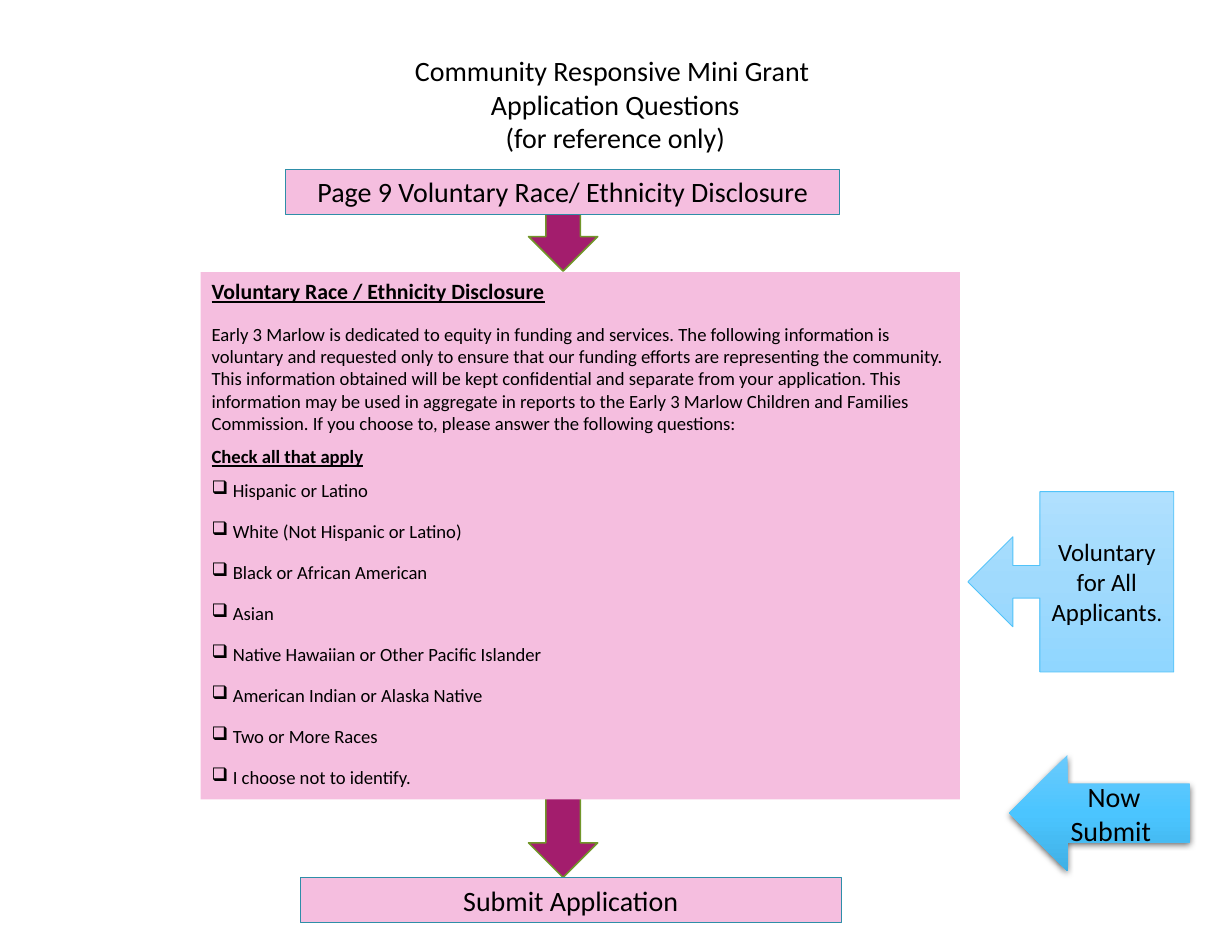
from copy import deepcopy

from lxml.etree import SubElement
from pptx import Presentation
from pptx.dml.color import RGBColor
from pptx.enum.shapes import MSO_SHAPE
from pptx.enum.text import MSO_ANCHOR, MSO_AUTO_SIZE, PP_ALIGN
from pptx.oxml.ns import qn
from pptx.util import Cm, Pt

TITLE = "Community Responsive Mini Grant \nApplication Questions\n(for reference only)"
TITLE_BOX = (7.67, 1.09, 12.57, 2.57)

STEPS = [
    ("Page 9 Voluntary Race/ Ethnicity Disclosure", (6.48, 3.84, 12.57, 1.02)),
    ("Submit Application", (6.81, 19.91, 12.27, 1.02)),
]

DISCLOSURE_BOX = (4.55, 6.17, 17.22, 11.96)
HEADING = "Voluntary Race / Ethnicity Disclosure"
EXPLANATION = (
    "Early 3 Marlow is dedicated to equity in funding and services. The following "
    "information is voluntary and requested only to ensure that our funding efforts are "
    "representing the community. This information obtained will be kept confidential and "
    "separate from your application. This information may be used in aggregate in reports "
    "to the Early 3 Marlow Children and Families Commission. If you choose to, please "
    "answer the following questions:"
)
PROMPT = "Check all that apply"
CHOICES = [
    "Hispanic or Latino",
    "White (Not Hispanic or Latino)",
    "Black or African American",
    "Asian",
    "Native Hawaiian or Other Pacific Islander",
    "American Indian or Alaska Native",
    "Two or More Races",
    "I choose not to identify.",
]

FLOW_CENTER = 12.77
FLOW_WIDTH = 1.57
FLOW_SPANS = [(4.47, 6.15), (16.72, 19.9)]

VOLUNTARY = ("Voluntary for All Applicants", ". ")
VOLUNTARY_BOX = (21.95, 11.15, 4.67, 4.09)
VOLUNTARY_ADJUSTMENTS = (0.18, 0.25, 0.25, 0.65)
SUBMIT = "Now\nSubmit "
SUBMIT_BOX = (22.89, 17.12, 4.09, 2.64)

THEME = {
    "font": "Calibri",
    "text": "000000",
    "panel": "F5BEDF",
    "step_line": "2E8EA8",
    "flow": "A31D6D",
    "flow_line": "719629",
    "voluntary": ("B0E0FE", "A0DAFD", "90D6FF"),
    "voluntary_line": "51C3F9",
    "submit": ("6BCAFC", "4BC5FF", "40B0E5"),
    "large": 18,
    "callout": 16,
    "heading": 14,
    "body": 12,
}


def color(key):
    return RGBColor.from_string(THEME[key])


def add_block(slide, kind, box, fill=None, line=None, width=1):
    block = slide.shapes.add_shape(kind, *map(Cm, box))
    block.shadow.inherit = False
    if fill:
        block.fill.solid()
        block.fill.fore_color.rgb = color(fill)
    if line:
        block.line.color.rgb = color(line)
        block.line.width = Pt(width)
    else:
        block.line.fill.background()
    return block


def fill_gradient(block, key):
    block.fill.gradient()
    block.fill.gradient_angle = 270
    stops = block._element.spPr.find(qn("a:gradFill")).find(qn("a:gsLst"))
    stops.insert(1, deepcopy(stops[0]))
    for index, (stop, value) in enumerate(zip(block.fill.gradient_stops, THEME[key])):
        stop.position = index / 2
        stop.color.rgb = RGBColor.from_string(value)


def add_soft_shadow(block):
    effects = block._element.spPr.find(qn("a:effectLst"))
    shadow = SubElement(effects, qn("a:outerShdw"), blurRad=str(Pt(4.5)),
                        dist=str(Pt(1.5)), dir="5400000", rotWithShape="0")
    tone = SubElement(shadow, qn("a:srgbClr"), val="000000")
    SubElement(tone, qn("a:alpha"), val="63000")


def style(paragraph, size, align=PP_ALIGN.CENTER, space=0, strong=False):
    paragraph.alignment = align
    paragraph.space_before = paragraph.space_after = Pt(space)
    for run in paragraph.runs:
        run.font.name = THEME["font"]
        run.font.size = Pt(THEME[size])
        run.font.color.rgb = color("text")
        run.font.bold = run.font.underline = strong


def add_checkbox(paragraph):
    properties = paragraph._p.get_or_add_pPr()
    properties.set("marL", str(Cm(0.48)))
    properties.set("indent", str(Cm(-0.48)))
    SubElement(properties, qn("a:buChar"), char="❑")


def add_title(slide):
    title = slide.shapes.title
    title.left, title.top, title.width, title.height = map(Cm, TITLE_BOX)
    frame = title.text_frame
    frame.text = TITLE
    frame.word_wrap = True
    frame.auto_size = MSO_AUTO_SIZE.NONE
    frame.vertical_anchor = MSO_ANCHOR.TOP
    for paragraph in frame.paragraphs:
        style(paragraph, "large")


def add_flow_arrows(slide):
    for top, bottom in FLOW_SPANS:
        length = bottom - top
        box = (FLOW_CENTER - length / 2, (top + bottom - FLOW_WIDTH) / 2, length, FLOW_WIDTH)
        arrow = add_block(slide, MSO_SHAPE.RIGHT_ARROW, box, "flow", "flow_line")
        arrow.rotation = 90


def add_disclosure(slide):
    panel = add_block(slide, MSO_SHAPE.RECTANGLE, DISCLOSURE_BOX, "panel")
    frame = panel.text_frame
    frame.vertical_anchor = MSO_ANCHOR.TOP
    frame.text = "\n".join([HEADING, EXPLANATION, PROMPT, *CHOICES])
    heading, explanation, prompt, *choices = frame.paragraphs
    style(heading, "heading", PP_ALIGN.LEFT, 6, True)
    style(explanation, "body", PP_ALIGN.LEFT, 6)
    style(prompt, "body", PP_ALIGN.LEFT, 1, True)
    for choice in choices:
        style(choice, "body", PP_ALIGN.LEFT, 6)
        add_checkbox(choice)


def add_steps(slide):
    for label, box in STEPS:
        step = add_block(slide, MSO_SHAPE.RECTANGLE, box, "panel", "step_line", 0.75)
        step.text_frame.text = label
        step.text_frame.vertical_anchor = MSO_ANCHOR.TOP
        style(step.text_frame.paragraphs[0], "large", space=6)


def add_side_notes(slide):
    voluntary = add_block(slide, MSO_SHAPE.LEFT_ARROW_CALLOUT, VOLUNTARY_BOX,
                          line="voluntary_line", width=0.5)
    fill_gradient(voluntary, "voluntary")
    for index, value in enumerate(VOLUNTARY_ADJUSTMENTS):
        voluntary.adjustments[index] = value
    note = voluntary.text_frame.paragraphs[0]
    for part in VOLUNTARY:
        note.add_run().text = part
    style(note, "callout")
    note.runs[1].font.size = Pt(THEME["heading"])

    submit = add_block(slide, MSO_SHAPE.LEFT_ARROW, SUBMIT_BOX)
    fill_gradient(submit, "submit")
    add_soft_shadow(submit)
    submit.text_frame.text = SUBMIT
    for paragraph in submit.text_frame.paragraphs:
        style(paragraph, "large")


def main():
    """Build the voluntary disclosure page of the application flow."""
    deck = Presentation()
    deck.slide_width, deck.slide_height = Cm(27.94), Cm(21.59)
    slide = deck.slides.add_slide(deck.slide_layouts[5])
    add_title(slide)
    add_flow_arrows(slide)
    add_disclosure(slide)
    add_steps(slide)
    add_side_notes(slide)
    deck.save("out.pptx")


if __name__ == "__main__":
    main()
